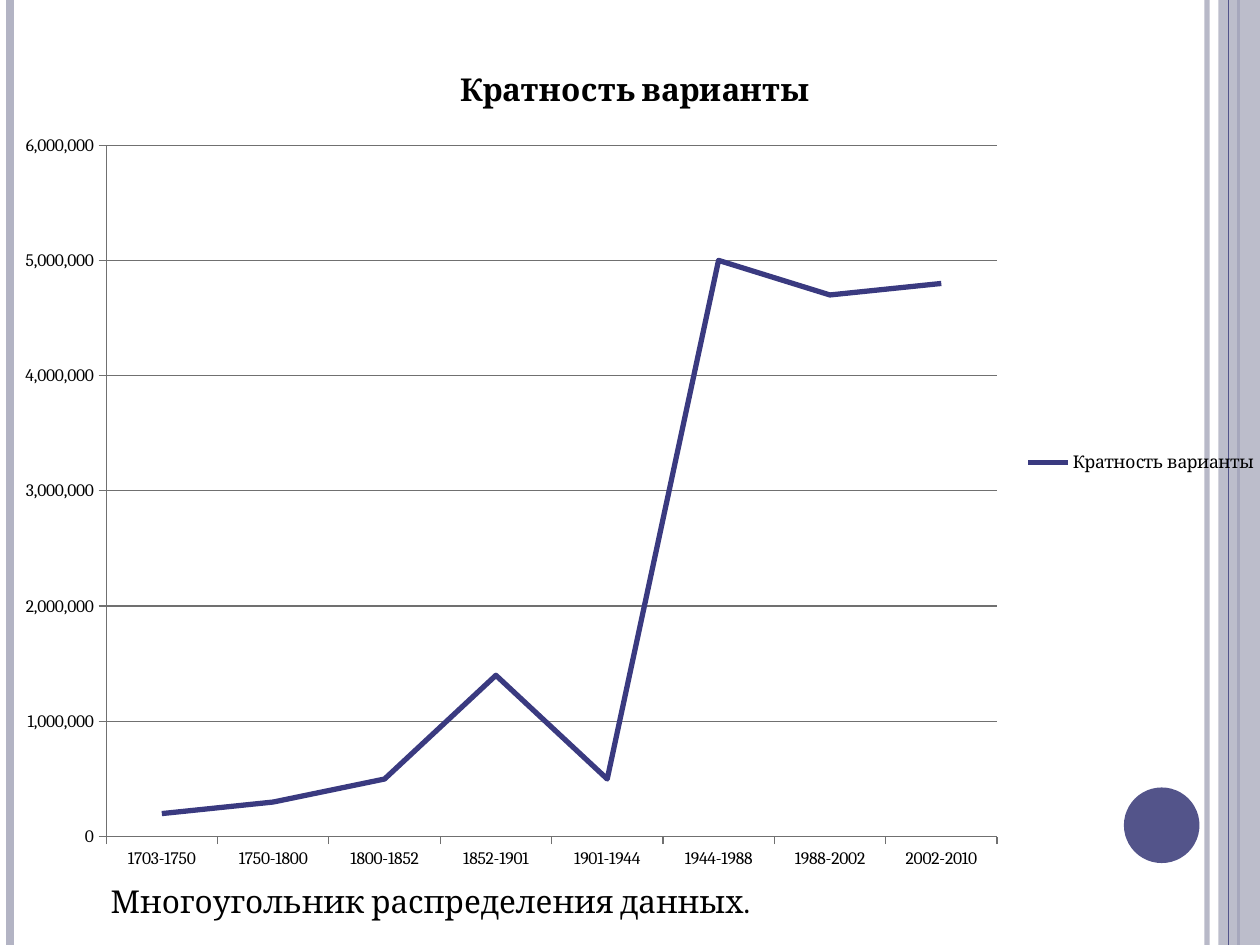
from dataclasses import dataclass

from lxml.etree import SubElement
from pptx import Presentation
from pptx.chart.data import CategoryChartData
from pptx.dml.color import RGBColor
from pptx.enum.chart import XL_CHART_TYPE, XL_LEGEND_POSITION, XL_TICK_MARK
from pptx.enum.shapes import MSO_CONNECTOR, MSO_SHAPE
from pptx.enum.text import MSO_AUTO_SIZE
from pptx.oxml.ns import qn
from pptx.util import Inches, Pt


@dataclass(frozen=True)
class Theme:
    font: str = "Cambria"
    ink: str = "000000"
    main: str = "53548A"
    deep: str = "3A3A80"
    pale: str = "B3B4C4"
    grid: str = "707070"
    small: int = 10
    large: int = 18


THEME = Theme()
WIDE, HIGH = 10, 7.5
NAME = "Кратность варианты"
DATA = {
    "1703-1750": 200000,
    "1750-1800": 300000,
    "1800-1852": 500000,
    "1852-1901": 1400000,
    "1901-1944": 500000,
    "1944-1988": 5000000,
    "1988-2002": 4700000,
    "2002-2010": 4800000,
}
# Left edge, width in points, colour and opacity of each upright line
LINES = [
    (9.58, 3, THEME.pale, 93),
    (0.08, 4.5, THEME.pale, 100),
    (9.83, 1.5, THEME.main, 100),
]
EDGE = (9.75, 0.75, THEME.main, 100)


def color(hue):
    return RGBColor.from_string(hue)


def fade(part, share):
    """Set the opacity, in percent, of a solid colour inside part."""
    if share < 100:
        node = next(part.iter(qn("a:srgbClr")))
        SubElement(node, qn("a:alpha"), val=str(share * 1000))


def style(font, size, bold=False):
    looks = {"name": THEME.font, "size": Pt(size), "bold": bold}
    for key, value in looks.items():
        setattr(font, key, value)
    font.color.rgb = color(THEME.ink)


def stroke(line, hue, width):
    line.color.rgb = color(hue)
    line.width = Pt(width)


def add_line(slide, left, width, hue, share):
    x = Inches(left)
    line = slide.shapes.add_connector(
        MSO_CONNECTOR.STRAIGHT, x, 0, x, Inches(HIGH))
    stroke(line.line, hue, width)
    props = line._element.spPr
    SubElement(props, qn("a:effectLst"))
    fade(props, share)


def add_shape(slide, kind, box, hue, share=100):
    shape = slide.shapes.add_shape(kind, *map(Inches, box))
    shape.shadow.inherit = False
    shape.fill.solid()
    shape.fill.fore_color.rgb = color(hue)
    shape.line.fill.background()
    fade(shape._element.spPr, share)


def add_chart(slide, box):
    data = CategoryChartData(number_format="#,##0")
    data.categories = list(DATA)
    data.add_series(NAME, list(DATA.values()))
    chart = slide.shapes.add_chart(
        XL_CHART_TYPE.LINE_STACKED, *map(Inches, box), data).chart
    style(chart.font, THEME.small)

    chart.has_title = True
    para = chart.chart_title.text_frame.paragraphs[0]
    run = para.add_run()
    run.text = NAME
    style(run.font, THEME.large, True)
    chart.chart_title.include_in_layout = False

    chart.has_legend = True
    chart.legend.position = XL_LEGEND_POSITION.RIGHT
    chart.legend.include_in_layout = False

    for axis in (chart.category_axis, chart.value_axis):
        axis.major_tick_mark = XL_TICK_MARK.OUTSIDE
        axis.minor_tick_mark = XL_TICK_MARK.NONE
        stroke(axis.format.line, THEME.grid, 0.75)
    scale = {"minimum_scale": 0, "maximum_scale": 6000000,
             "major_unit": 1000000, "has_major_gridlines": True}
    for key, value in scale.items():
        setattr(chart.value_axis, key, value)
    stroke(chart.value_axis.major_gridlines.format.line, THEME.grid, 0.75)
    labels = chart.value_axis.tick_labels
    labels.number_format = "#,##0"
    labels.number_format_is_linked = False

    plot = chart.plots[0]
    plot.vary_by_categories = False
    series = plot.series[0]
    series.smooth = False
    stroke(series.format.line, THEME.deep, 3)


def add_text(slide, box, text):
    frame = slide.shapes.add_textbox(*map(Inches, box)).text_frame
    frame.word_wrap = True
    frame.auto_size = MSO_AUTO_SIZE.SHAPE_TO_FIT_TEXT
    run = frame.paragraphs[0].add_run()
    run.text = text
    style(run.font, THEME.large)


def main():
    deck = Presentation()
    deck.slide_width, deck.slide_height = Inches(WIDE), Inches(HIGH)
    slide = deck.slides.add_slide(deck.slide_layouts[6])
    for line in LINES:
        add_line(slide, *line)
    add_shape(slide, MSO_SHAPE.RECTANGLE,
              (9.67, 0, WIDE - 9.67, HIGH), THEME.pale, 87)
    add_line(slide, *EDGE)
    add_shape(slide, MSO_SHAPE.OVAL, (8.92, 6.25, 0.6, 0.6), THEME.main)
    add_chart(slide, (0, 0.31, 10.08, 6.72))
    add_text(slide, (0.78, 6.95, 6.56, 0.4),
             "Многоугольник распределения данных.")
    deck.save("out.pptx")


if __name__ == "__main__":
    main()
